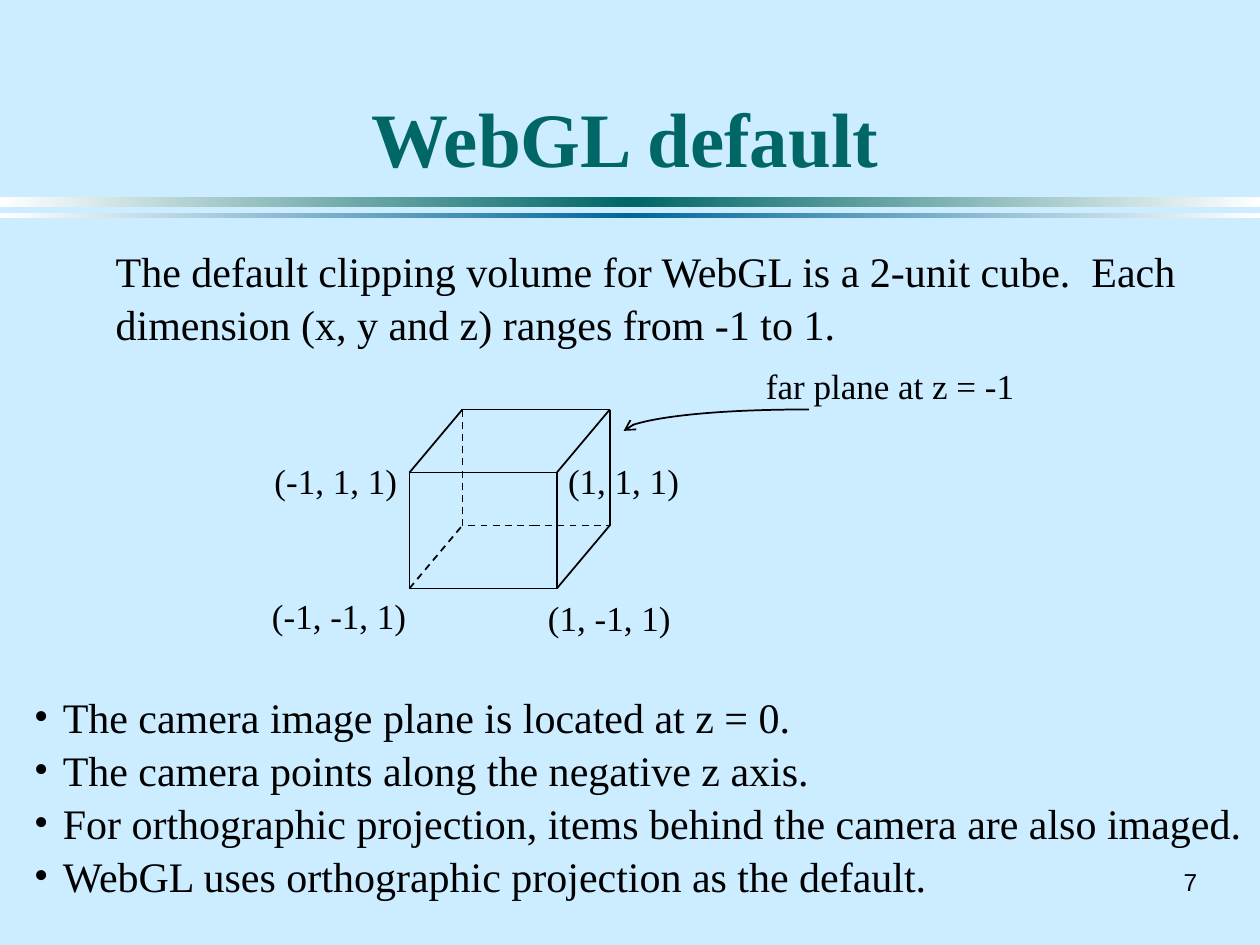
"""Build a slide that explains the default WebGL clipping volume."""
from copy import deepcopy
from dataclasses import dataclass

from lxml import etree
from pptx import Presentation
from pptx.dml.color import RGBColor
from pptx.enum import dml, shapes, text
from pptx.oxml.ns import qn
from pptx.util import Inches, Pt


@dataclass(frozen=True)
class Theme:
    background: RGBColor = RGBColor(0xCC, 0xEC, 0xFF)
    ink: RGBColor = RGBColor(0, 0, 0)
    white: RGBColor = RGBColor(0xFF, 0xFF, 0xFF)
    teal: RGBColor = RGBColor(0, 0x66, 0x66)
    blue: RGBColor = RGBColor(0, 0x66, 0x99)
    serif: str = "Times New Roman"
    sans: str = "Arial"
    title: Pt = Pt(44)
    body: Pt = Pt(24)
    label: Pt = Pt(20)
    number: Pt = Pt(14)
    stroke: Pt = Pt(1)


theme = Theme()


def write(shape, lines, frame_format, paragraph_format, font_format):
    frame = shape.text_frame
    frame.text = "\n".join(lines)
    for name, value in frame_format.items():
        setattr(frame, name, value)
    for paragraph in frame.paragraphs:
        for name, value in paragraph_format.items():
            setattr(paragraph, name, value)
        for name, value in font_format.items():
            setattr(paragraph.runs[0].font, name, value)
        paragraph.runs[0].font.color.rgb = theme.teal if shape.is_placeholder else theme.ink


def draw_line(parent, kind, start, end, dash=None):
    connector = parent.add_connector(kind, *map(Inches, start + end))
    connector.line.color.rgb = theme.ink
    connector.line.width = theme.stroke
    connector.line.dash_style = dash
    etree.SubElement(connector._element.spPr, qn("a:effectLst"))
    return connector


presentation = Presentation()
presentation.slide_width, presentation.slide_height = Inches(10), Inches(7.5)
slide = presentation.slides.add_slide(presentation.slide_layouts[5])
slide.background.fill.solid()
slide.background.fill.fore_color.rgb = theme.background

for top, height, color in [(1.56, 0.08, theme.teal), (1.69, 0.04, theme.blue)]:
    bar = slide.shapes.add_shape(
        shapes.MSO_SHAPE.RECTANGLE, 0, Inches(top), Inches(10), Inches(height))
    bar.shadow.inherit = False
    bar.line.fill.background()
    bar.fill.gradient()
    bar.fill.gradient_angle = 0
    stop_list = bar._element.spPr.find(".//" + qn("a:gsLst"))
    stop_list.insert(1, deepcopy(stop_list[0]))
    stop_values = zip(bar.fill.gradient_stops, (0, 0.5, 1), (theme.white, color, theme.white))
    for stop, position, stop_color in stop_values:
        stop.position = position
        stop.color.rgb = stop_color

title = slide.shapes.title
title.left, title.top, title.width, title.height = map(Inches, (0.67, 0.25, 8.58, 1.25))
write(title, ["WebGL default"],
      {"vertical_anchor": text.MSO_ANCHOR.BOTTOM, "word_wrap": True},
      {"alignment": text.PP_ALIGN.CENTER},
      {"name": theme.serif, "size": theme.title, "bold": True})

wrapped = {"word_wrap": True, "auto_size": text.MSO_AUTO_SIZE.SHAPE_TO_FIT_TEXT}
unwrapped = {**wrapped, "word_wrap": False}
body_font = {"name": theme.serif, "size": theme.body}
label_font = {"name": theme.serif, "size": theme.label}
number_font = {"name": theme.sans, "size": theme.number}

introduction = slide.shapes.add_textbox(*map(Inches, (0.82, 1.88, 8.77, 0.91)))
write(introduction,
      ["The default clipping volume for WebGL is a 2-unit cube.  Each dimension "
       "(x, y and z) ranges from -1 to 1."],
      wrapped, {"line_spacing": 1.05}, body_font)

left, right, top, bottom = 3.25, 4.42, 3.75, 4.67
shift_x, shift_y = 0.42, -0.5
back_left, back_right = left + shift_x, right + shift_x
back_top, back_bottom = top + shift_y, bottom + shift_y
dashed = dml.MSO_LINE.DASH
straight = shapes.MSO_CONNECTOR.STRAIGHT
cube = slide.shapes.add_group_shape().shapes
for x, y, dash in [(left, top, None), (back_left, back_top, dashed)]:
    face = cube.add_shape(shapes.MSO_SHAPE.RECTANGLE,
                          *map(Inches, (x, y, right - left, bottom - top)))
    face.shadow.inherit = False
    face.fill.background()
    face.line.color.rgb = theme.ink
    face.line.width = theme.stroke
    face.line.dash_style = dash
for x, y, dash in [(left, top, None), (right, top, None),
                   (right, bottom, None), (left, bottom, dashed)]:
    draw_line(cube, straight, (x, y), (x + shift_x, y + shift_y), dash)
draw_line(cube, straight, (back_left, back_top), (back_right, back_top))
draw_line(cube, straight, (back_right, back_top), (back_right, back_bottom))

labels = [
    ("far plane at z = -1", 5.98, 2.83, 2.19),
    ("(1, 1, 1)", 4.41, 3.58, 1.09),
    ("(-1, 1, 1)", 2.08, 3.58, 1.18),
    ("(1, -1, 1)", 4.25, 4.67, 1.18),
    ("(-1, -1, 1)", 2.06, 4.65, 1.28),
]
for caption, x, y, width in labels:
    label = slide.shapes.add_textbox(*map(Inches, (x, y, width, 0.44)))
    write(label, [caption], unwrapped, {"line_spacing": 1.05}, label_font)

facts = slide.shapes.add_textbox(*map(Inches, (0.17, 5.42, 9.83, 1.72)))
write(facts,
      ["The camera image plane is located at z = 0.",
       "The camera points along the negative z axis.",
       "For orthographic projection, items behind the camera are also imaged.",
       "WebGL uses orthographic projection as the default."],
      wrapped, {"line_spacing": 1.05}, body_font)
for paragraph in facts.text_frame.paragraphs:
    properties = paragraph._p.get_or_add_pPr()
    properties.set("marL", str(Inches(0.23)))
    properties.set("indent", str(-Inches(0.23)))
    etree.SubElement(properties, qn("a:buFont"), typeface=theme.serif)
    etree.SubElement(properties, qn("a:buChar"), char="•")

pointer = draw_line(slide.shapes, shapes.MSO_CONNECTOR.CURVE, (6.42, 3.25), (4.95, 3.42))
pointer._element.spPr.find(qn("a:prstGeom")).set("prst", "curvedConnector2")
etree.SubElement(pointer.line._get_or_add_ln(), qn("a:tailEnd"), type="arrow")

number = slide.shapes.add_textbox(*map(Inches, (9.17, 6.83, 0.43, 0.33)))
write(number, ["7"], {**unwrapped, "vertical_anchor": text.MSO_ANCHOR.MIDDLE},
      {"alignment": text.PP_ALIGN.RIGHT}, number_font)

presentation.save("out.pptx")
